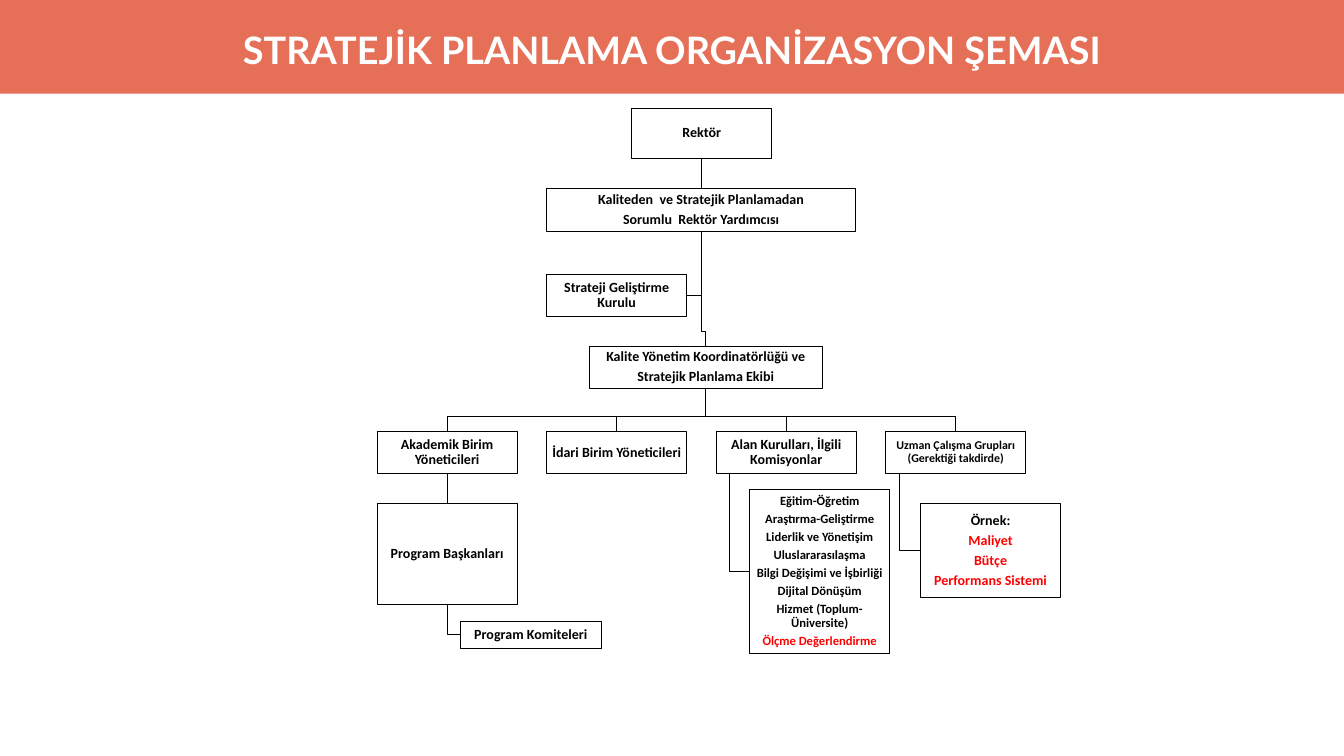
from dataclasses import dataclass

from lxml.etree import SubElement
from pptx import Presentation
from pptx.dml.color import RGBColor
from pptx.enum.shapes import MSO_CONNECTOR, MSO_SHAPE
from pptx.enum.text import MSO_ANCHOR, PP_ALIGN
from pptx.oxml.ns import qn
from pptx.util import Inches, Pt

CORAL = RGBColor(0xE5, 0x6F, 0x57)
WHITE = RGBColor(0xFF, 0xFF, 0xFF)
BLACK = RGBColor(0, 0, 0)
RED = RGBColor(0xFF, 0, 0)

WIDE, HIGH = 26.66, 15
LEFT, STEP, WIDTH = 7.48, 3.363, 2.78  # chart columns
ROWS = [2.15, 3.73, 5.44, 6.87, 8.56, 9.99, 12.32]
DROP = 0.29  # from the shared bar down to a box
INDENT = 0.27  # from a box's left edge to its hanging line


@dataclass
class Box:
    left: float
    top: float
    width: float
    height: float
    lines: list
    reds: tuple = ()
    size: int = 20

    @property
    def mid(self):
        return self.left + self.width / 2

    @property
    def base(self):
        return self.top + self.height

    @property
    def level(self):
        return self.top + self.height / 2


def col(n):
    return LEFT + n * STEP


def add_rect(slide, left, top, width, height, fill):
    rect = slide.shapes.add_shape(
        MSO_SHAPE.RECTANGLE, *map(Inches, (left, top, width, height)))
    rect.shadow.inherit = False
    rect.fill.solid()
    rect.fill.fore_color.rgb = fill
    rect.line.fill.background()
    return rect


def style(para, name, size, color):
    para.alignment = PP_ALIGN.CENTER
    para.font.name = name
    para.font.size = Pt(size)
    para.font.bold = True
    para.font.color.rgb = color


def add_title(slide, text):
    add_rect(slide, 0, 0, WIDE, HIGH * 0.124, CORAL)
    band = add_rect(slide, 0, 0.47, WIDE, 1.01, CORAL)
    frame = band.text_frame
    frame.word_wrap = True
    frame.text = text
    style(frame.paragraphs[0], "Lato", 54, WHITE)


def add_box(slide, box):
    rect = add_rect(slide, box.left, box.top, box.width, box.height, WHITE)
    rect.line.color.rgb = BLACK
    rect.line.width = Pt(1)
    frame = rect.text_frame
    frame.word_wrap = True
    frame.vertical_anchor = MSO_ANCHOR.MIDDLE
    frame.margin_left = frame.margin_right = Inches(0.01)
    frame.margin_top = frame.margin_bottom = Inches(0.01)
    frame.text = "\n".join(box.lines + list(box.reds))
    for n, para in enumerate(frame.paragraphs):
        style(para, "Calibri", box.size, BLACK if n < len(box.lines) else RED)
        para.line_spacing = 0.9
        para.space_after = Pt(box.size * 0.35)


def add_wire(slide, *points):
    """Draw a straight connector, or an open bent line through the points."""
    spots = [(Inches(x), Inches(y)) for x, y in points]
    if len(spots) == 2:
        wire = slide.shapes.add_connector(
            MSO_CONNECTOR.STRAIGHT, *spots[0], *spots[1])
    else:
        path = slide.shapes.build_freeform(*spots[0])
        path.add_line_segments(spots[1:], close=False)
        wire = path.convert_to_shape()
        wire.fill.background()
    wire.line.color.rgb = BLACK
    wire.line.width = Pt(1)
    SubElement(wire.element.spPr, qn("a:effectLst"))


def link_down(slide, boss, unit):
    add_wire(slide, (boss.mid, boss.base), (boss.mid, unit.top))


def branch(slide, boss, unit):
    """Link a box to one below it by way of a level bar."""
    bar = unit.top - DROP
    add_wire(slide, (boss.mid, boss.base), (boss.mid, bar),
             (unit.mid, bar), (unit.mid, unit.top))


def hang(slide, x, boss, side, unit):
    """Drop from a box at x, then turn to one side of another box."""
    add_wire(slide, (x, boss.base), (x, unit.level), (side, unit.level))


def main():
    deck = Presentation()
    deck.slide_width, deck.slide_height = Inches(WIDE), Inches(HIGH)
    slide = deck.slides.add_slide(deck.slide_layouts[6])
    add_title(slide, "STRATEJİK PLANLAMA ORGANİZASYON ŞEMASI")

    rector = Box(12.53, ROWS[0], WIDTH, 0.99, ["Rektör"])
    deputy = Box(col(1), ROWS[1], 6.13, 0.87, [
        "Kaliteden  ve Stratejik Planlamadan", "Sorumlu  Rektör Yardımcısı"])
    board = Box(col(1), ROWS[2], WIDTH, 0.84, ["Strateji Geliştirme Kurulu"])
    team = Box(11.69, ROWS[3], 4.62, 0.83, [
        "Kalite Yönetim Koordinatörlüğü ve", "Stratejik Planlama Ekibi"])
    units = [Box(col(n), ROWS[4], WIDTH, 0.84, [text]) for n, text in enumerate([
        "Akademik Birim Yöneticileri",
        "İdari Birim Yöneticileri",
        "Alan Kurulları, İlgili Komisyonlar",
        "Uzman Çalışma Grupları (Gerektiği takdirde)"])]
    units[3].size = 17  # its longer text must stay inside the border
    heads = Box(col(0), ROWS[5], WIDTH, 2, ["Program Başkanları"])
    panels = Box(9.14, ROWS[6], WIDTH, 0.55, ["Program Komiteleri"])
    fields = Box(14.87, 9.71, WIDTH, 3.26, [
        "Eğitim-Öğretim", "Araştırma-Geliştirme", "Liderlik ve Yönetişim",
        "Uluslararasılaşma", "Bilgi Değişimi ve İşbirliği", "Dijital Dönüşüm",
        "Hizmet (Toplum-Üniversite)"], ("Ölçme Değerlendirme",), 18)
    samples = Box(18.26, ROWS[5], WIDTH, 1.87, ["Örnek:"],
                  ("Maliyet", "Bütçe", "Performans Sistemi"))

    link_down(slide, rector, deputy)
    hang(slide, deputy.mid, deputy, board.left + board.width, board)
    branch(slide, deputy, team)
    for unit in units:
        branch(slide, team, unit)
    link_down(slide, units[0], heads)
    hang(slide, heads.mid, heads, panels.left, panels)
    for unit, detail in zip(units[2:], (fields, samples)):
        hang(slide, unit.left + INDENT, unit, detail.left, detail)

    for box in (rector, deputy, board, team, *units,
                heads, panels, fields, samples):
        add_box(slide, box)
    deck.save("out.pptx")


if __name__ == "__main__":
    main()
